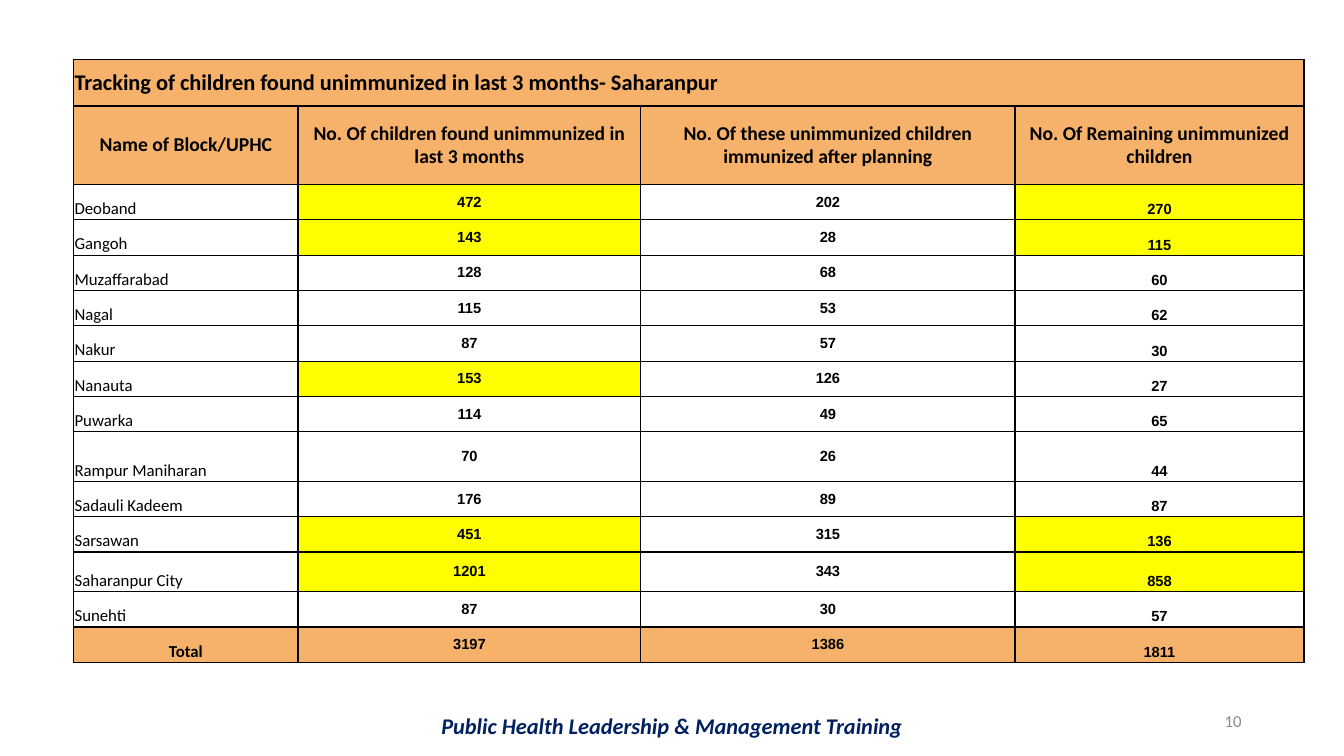
"""Build the slide tracking unimmunized children by block in Saharanpur."""
from lxml.etree import SubElement
from pptx import Presentation
from pptx.dml.color import RGBColor
from pptx.enum.text import MSO_ANCHOR, MSO_AUTO_SIZE, PP_ALIGN
from pptx.oxml.ns import qn
from pptx.util import Cm, Pt

BLACK = RGBColor(0x00, 0x00, 0x00)
ORANGE = RGBColor(0xF6, 0xB2, 0x6B)
YELLOW = RGBColor(0xFF, 0xFF, 0x00)
NAVY = RGBColor(0x00, 0x20, 0x60)
GRAY = RGBColor(0x8C, 0x8C, 0x8C)

TITLE = "Tracking of children found unimmunized in last 3 months- Saharanpur"
HEADINGS = [
    "Name of Block/UPHC",
    "No. Of children found unimmunized in last 3 months",
    "No. Of these unimmunized children immunized after planning",
    "No. Of Remaining unimmunized children",
]
BLOCKS = [
    ("Deoband", 472, 202),
    ("Gangoh", 143, 28),
    ("Muzaffarabad", 128, 68),
    ("Nagal", 115, 53),
    ("Nakur", 87, 57),
    ("Nanauta", 153, 126),
    ("Puwarka", 114, 49),
    ("Rampur Maniharan", 70, 26),
    ("Sadauli Kadeem", 176, 89),
    ("Sarsawan", 451, 315),
    ("Saharanpur City", 1201, 343),
    ("Sunehti", 87, 30),
]
FLAGGED_FOUND = {"Deoband", "Gangoh", "Nanauta", "Sarsawan", "Saharanpur City"}
REMAINING_LIMIT = 100
COLUMN_WIDTHS = [5.65, 8.64, 9.43, 7.28]
ROW_HEIGHT = 0.89
SPECIAL_HEIGHTS = {0: 1.17, 1: 1.98, 9: 1.25, 12: 1.0}

TITLE_FONT = {"name": "Calibri", "size": Pt(16), "bold": True}
HEADING_FONT = {"name": "Calibri", "size": Pt(14), "bold": True}
BLOCK_FONT = {"name": "Calibri", "size": Pt(12), "bold": False}
TOTAL_FONT = {"name": "Calibri", "size": Pt(12), "bold": True}
NUMBER_FONT = {"name": "Arial", "size": Pt(10.5), "bold": True}
FOOTER_FONT = {"name": "Calibri", "size": Pt(16), "bold": True, "italic": True}
PAGE_FONT = {"name": "Calibri", "size": Pt(12)}


def write(frame, text, font, color, align):
    paragraph = frame.paragraphs[0]
    paragraph.alignment = align
    run = paragraph.add_run()
    run.text = str(text)
    for attribute, value in font.items():
        setattr(run.font, attribute, value)
    run.font.color.rgb = color


def add_borders(cell):
    properties = cell._tc.get_or_add_tcPr()
    for side in ("a:lnL", "a:lnR", "a:lnT", "a:lnB"):
        line = SubElement(properties, qn(side), w=str(Pt(1)))
        fill = SubElement(line, qn("a:solidFill"))
        SubElement(fill, qn("a:srgbClr"), val=str(BLACK))


prs = Presentation()
prs.slide_width, prs.slide_height = Cm(33.87), Cm(19.05)
slide = prs.slides.add_slide(prs.slide_layouts[6])

footer = slide.shapes.add_textbox(Cm(2.33), Cm(17.83), Cm(29.21), Cm(0.94)).text_frame
footer.word_wrap = True
footer.auto_size = MSO_AUTO_SIZE.SHAPE_TO_FIT_TEXT
write(footer, "Public Health Leadership & Management Training",
      FOOTER_FONT, NAVY, PP_ALIGN.CENTER)

total_found = sum(found for _, found, _ in BLOCKS)
total_immunized = sum(immunized for _, _, immunized in BLOCKS)
rows = [[TITLE, "", "", ""], HEADINGS]
rows += [[name, found, immunized, found - immunized] for name, found, immunized in BLOCKS]
rows.append(["Total", total_found, total_immunized, total_found - total_immunized])
last_row = len(rows) - 1
heights = [SPECIAL_HEIGHTS.get(index, ROW_HEIGHT) for index in range(len(rows))]

tracking = slide.shapes.add_table(
    len(rows), len(HEADINGS), Cm(1.86), Cm(1.5),
    Cm(sum(COLUMN_WIDTHS)), Cm(sum(heights))).table
tracking.first_row = False
tracking.horz_banding = False
for column, width in zip(tracking.columns, COLUMN_WIDTHS):
    column.width = Cm(width)
for row, height in zip(tracking.rows, heights):
    row.height = Cm(height)

for r, values in enumerate(rows):
    for c, value in enumerate(values):
        cell = tracking.cell(r, c)
        is_number = r > 1 and c > 0
        side, edge = (Cm(0.08), Cm(0.05)) if is_number else (Cm(0.02), Cm(0.02))
        at_bottom = r > 1 and c in (0, 3)
        layout = {
            "margin_left": side, "margin_right": side,
            "margin_top": edge, "margin_bottom": edge,
            "vertical_anchor": MSO_ANCHOR.BOTTOM if at_bottom else MSO_ANCHOR.MIDDLE,
        }
        for attribute, setting in layout.items():
            setattr(cell, attribute, setting)
        add_borders(cell)

        flagged = 1 < r < last_row and (
            (c == 1 and values[0] in FLAGGED_FOUND)
            or (c == 3 and value > REMAINING_LIMIT))
        if r in (0, 1, last_row) or flagged:
            cell.fill.solid()
            cell.fill.fore_color.rgb = YELLOW if flagged else ORANGE
        else:
            cell.fill.background()

        if r == 0:
            font = TITLE_FONT
        elif r == 1:
            font = HEADING_FONT
        elif is_number:
            font = NUMBER_FONT
        else:
            font = TOTAL_FONT if r == last_row else BLOCK_FONT
        centered = is_number or r in (1, last_row)
        if value != "":
            write(cell.text_frame, value, font, BLACK,
                  PP_ALIGN.CENTER if centered else PP_ALIGN.LEFT)

tracking.cell(0, 0).merge(tracking.cell(0, len(HEADINGS) - 1))

page_number = slide.shapes.add_textbox(Cm(23.92), Cm(17.66), Cm(7.62), Cm(1.01)).text_frame
page_number.word_wrap = True
page_number.vertical_anchor = MSO_ANCHOR.MIDDLE
write(page_number, "10", PAGE_FONT, GRAY, PP_ALIGN.RIGHT)

prs.save("out.pptx")
